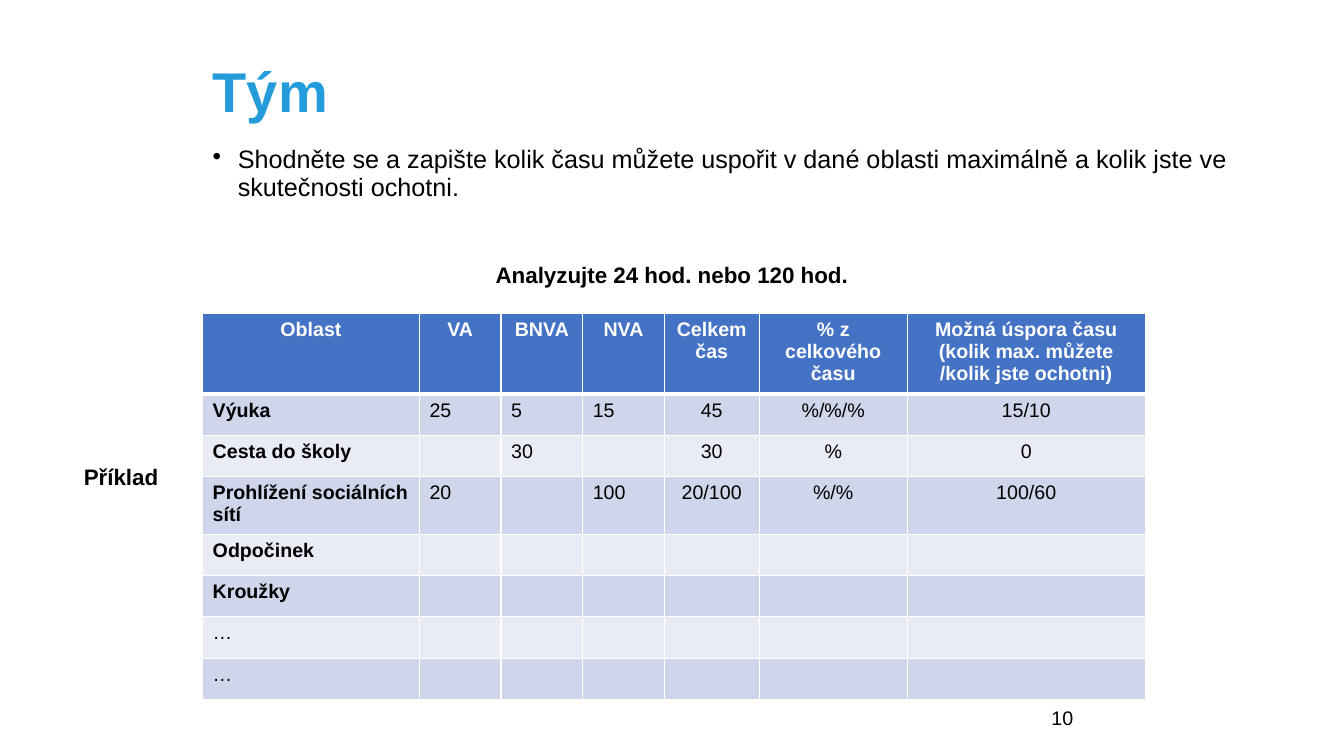
from lxml.etree import SubElement
from pptx import Presentation
from pptx.dml.color import RGBColor
from pptx.enum.text import MSO_ANCHOR, PP_ALIGN
from pptx.oxml.ns import qn
from pptx.util import Emu, Pt

BLACK = RGBColor(0x00, 0x00, 0x00)
WHITE = RGBColor(0xFF, 0xFF, 0xFF)
TITLE_BLUE = RGBColor(0x24, 0x9C, 0xDC)
HEADER_BLUE = RGBColor(0x44, 0x72, 0xC4)
BANDS = (RGBColor(0xCF, 0xD5, 0xEA), RGBColor(0xE9, 0xEB, 0xF5))

PX_EMU = 9144
FIRST_CENTRED_COLUMN = 4

COLUMN_WIDTHS = (215, 81, 81, 81, 94, 147, 236)
ROW_HEIGHTS = (79, 41, 41, 57, 41, 41, 41, 41)
HEADINGS = ("Oblast", "VA", "BNVA", "NVA", "Celkem čas", "% z celkového času",
            "Možná úspora času\n(kolik max. můžete /kolik jste ochotni)")
ACTIVITIES = (
    ("Výuka", "25", "5", "15", "45", "%/%/%", "15/10"),
    ("Cesta do školy", "", "30", "", "30", "%", "0"),
    ("Prohlížení sociálních sítí", "20", "", "100", "20/100", "%/%", "100/60"),
    ("Odpočinek",) + ("",) * 6,
    ("Kroužky",) + ("",) * 6,
    ("…",) + ("",) * 6,
    ("…",) + ("",) * 6,
)


def px(length):
    return Emu(length * PX_EMU)


class SlideBuilder:
    font_name = "Arial"

    def __init__(self, slide):
        self.slide = slide

    def style(self, paragraph, size, color=BLACK, bold=False, align=PP_ALIGN.LEFT):
        paragraph.alignment = align
        font = paragraph.font
        font.name = self.font_name
        font.size = Pt(size)
        font.bold = bold
        font.color.rgb = color

    def title(self, text, left, top, width, height):
        title = self.slide.shapes.title
        title.left, title.top, title.width, title.height = map(
            px, (left, top, width, height))
        title.text_frame.text = text
        title.text_frame.vertical_anchor = MSO_ANCHOR.MIDDLE
        paragraph = title.text_frame.paragraphs[0]
        paragraph.line_spacing = 0.9
        self.style(paragraph, 40, TITLE_BLUE, True)

    def text(self, text, left, top, width, height, size, bold=False,
             align=PP_ALIGN.LEFT):
        box = self.slide.shapes.add_textbox(*map(px, (left, top, width, height)))
        box.text_frame.word_wrap = True
        box.text_frame.text = text
        paragraph = box.text_frame.paragraphs[0]
        self.style(paragraph, size, bold=bold, align=align)
        return paragraph

    def bullet(self, text, left, top, width, height, size, indent):
        paragraph = self.text(text, left, top, width, height, size)
        properties = paragraph._p.get_or_add_pPr()
        properties.set("marL", str(px(indent)))
        properties.set("indent", str(px(-indent)))
        mark = properties.makeelement(qn("a:buChar"), {"char": "•"})
        properties.insert(0, mark)
        paragraph.line_spacing = 0.9

    def borders(self, cell, bottom):
        properties = cell._tc.get_or_add_tcPr()
        for side, points in (("L", 1), ("R", 1), ("T", 1), ("B", bottom)):
            line = SubElement(properties, qn(f"a:ln{side}"), w=str(Pt(points)))
            fill = SubElement(line, qn("a:solidFill"))
            SubElement(fill, qn("a:srgbClr"), val=str(WHITE))

    def cell(self, cell, text, fill, color, bold, align, bottom):
        self.borders(cell, bottom)
        cell.fill.solid()
        cell.fill.fore_color.rgb = fill
        cell.text_frame.text = text
        for paragraph in cell.text_frame.paragraphs:
            self.style(paragraph, 14, color, bold, align)

    def table(self, headings, records, left, top):
        table = self.slide.shapes.add_table(
            len(ROW_HEIGHTS), len(COLUMN_WIDTHS), px(left), px(top),
            px(sum(COLUMN_WIDTHS)), px(sum(ROW_HEIGHTS))).table
        for column, width in zip(table.columns, COLUMN_WIDTHS):
            column.width = px(width)
        for row, height in zip(table.rows, ROW_HEIGHTS):
            row.height = px(height)
        for c, heading in enumerate(headings):
            self.cell(table.cell(0, c), heading, HEADER_BLUE, WHITE, True,
                      PP_ALIGN.CENTER, 3)
        for r, record in enumerate(records):
            for c, value in enumerate(record):
                align = PP_ALIGN.CENTER if c >= FIRST_CENTRED_COLUMN else PP_ALIGN.LEFT
                self.cell(table.cell(r + 1, c), value, BANDS[r % 2], BLACK,
                          c == 0 and value != "…", align, 1)


def main():
    presentation = Presentation()
    presentation.slide_width = px(1333)
    presentation.slide_height = px(750)
    builder = SlideBuilder(presentation.slides.add_slide(presentation.slide_layouts[5]))
    builder.title("Tým", 201, 15, 988, 158)
    builder.bullet("Shodněte se a zapište kolik času můžete uspořit v dané oblasti "
                   "maximálně a kolik jste ve skutečnosti ochotni.",
                   201, 141, 1042, 113, 18, 25)
    builder.text("10", 1033, 695, 300, 40, 14)
    builder.text("Analyzujte 24 hod. nebo 120 hod.", 466, 254, 401, 37, 16, True,
                 PP_ALIGN.CENTER)
    builder.text("Příklad", 39, 455, 162, 37, 16, True, PP_ALIGN.CENTER)
    builder.table(HEADINGS, ACTIVITIES, 201, 311)
    presentation.save("out.pptx")


if __name__ == "__main__":
    main()
